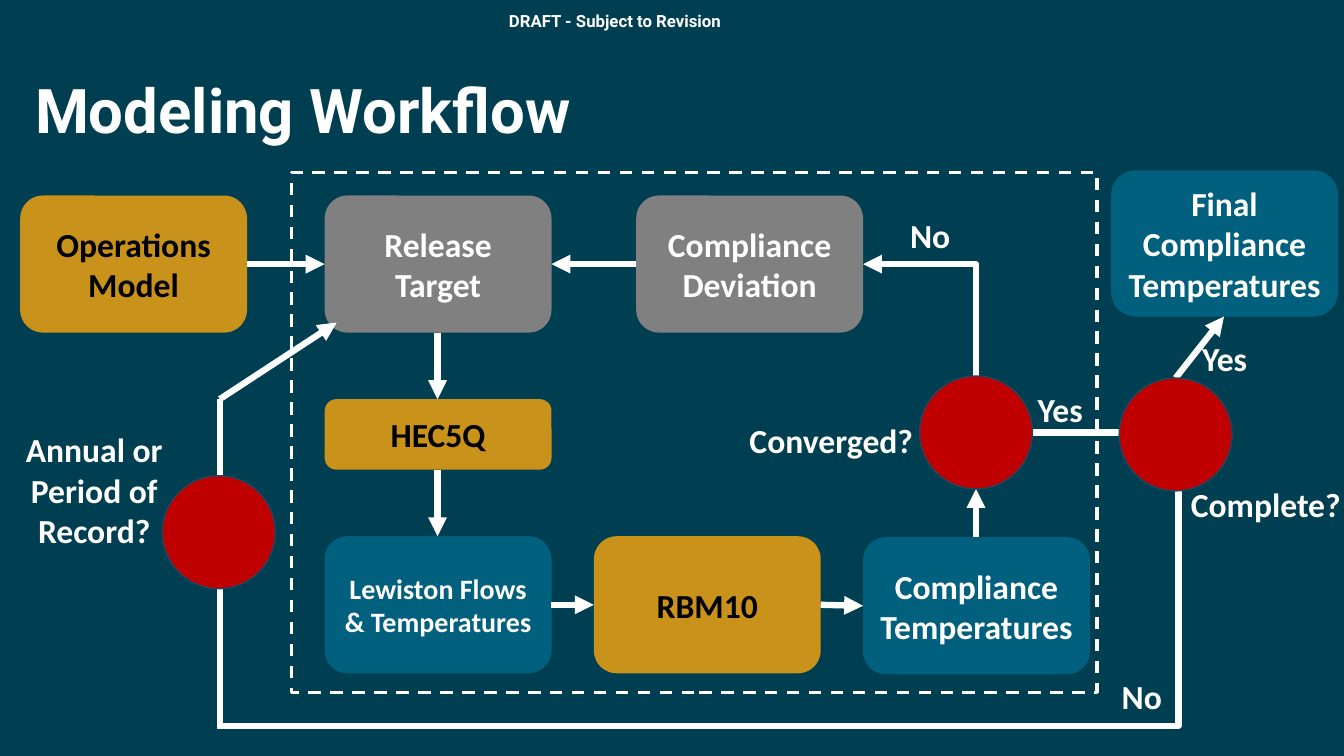
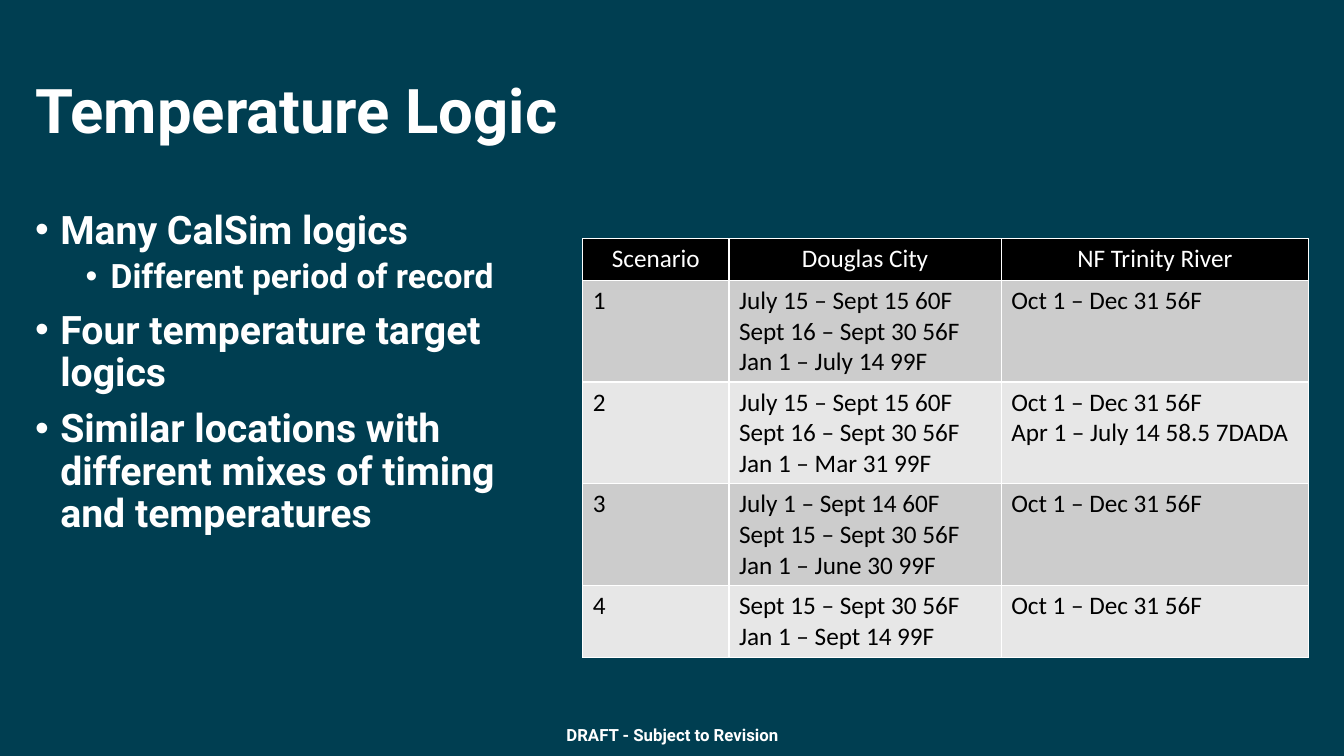
from lxml import etree
from pptx import Presentation
from pptx import util as u
from pptx.dml.color import RGBColor
from pptx.enum import dml, shapes, text
from pptx.oxml import ns

PX = 9144  # EMU in one px, 100 px to the inch
PAGE_SIZE = (1333, 750)

NAVY = RGBColor(0x00, 0x3E, 0x51)
TEAL = RGBColor(0x00, 0x60, 0x7E)
GOLD = RGBColor(0xC9, 0x92, 0x1B)
GRAY = RGBColor(0x80, 0x80, 0x80)
RED = RGBColor(0xC0, 0x00, 0x00)
OUTLINE = RGBColor(0x28, 0x44, 0x5D)
WHITE = RGBColor(0xFF, 0xFF, 0xFF)
BLACK = RGBColor(0x00, 0x00, 0x00)
ROW_FILLS = (RGBColor(0xCC, 0xCC, 0xCC), RGBColor(0xE7, 0xE7, 0xE7))

HEADING_FONT = "Roboto"
DIAGRAM_FONT = "Calibri"
LINE_WIDTH = 4.5

BOX_W, BOX_H, CIRCLE = 225, 136, 112
TARGET_X, TOP_Y, BOTTOM_Y = 322, 194, 532

BULLETS = [
    (0, "Many CalSim logics"),
    (1, "Different period of record"),
    (0, "Four temperature target logics"),
    (0, "Similar locations with different mixes of timing and temperatures"),
]
# level: (left margin px, size pt, space before pt)
BULLET_LEVELS = {0: (25, 28, 10), 1: (75, 24, 5)}

COLUMN_WIDTHS = (145, 270, 305)
ROW_HEIGHTS = (41, 101, 101, 101, 71)
SCENARIOS = [
    ("Scenario", "Douglas City", "NF Trinity River"),
    ("1", "July 15 – Sept 15 60F\nSept 16 – Sept 30 56F\nJan 1 – July 14 99F",
     "Oct 1 – Dec 31 56F"),
    ("2", "July 15 – Sept 15 60F\nSept 16 – Sept 30 56F\nJan 1 – Mar 31 99F",
     "Oct 1 – Dec 31 56F\nApr 1 – July 14 58.5 7DADA"),
    ("3", "July 1 – Sept 14 60F\nSept 15 – Sept 30 56F\nJan 1 – June 30 99F",
     "Oct 1 – Dec 31 56F"),
    ("4", "Sept 15 – Sept 30 56F\nJan 1 – Sept 14 99F", "Oct 1 – Dec 31 56F"),
]


def emu(lengths):
    return [length * PX for length in lengths]


def add_child(parent, tag, **attributes):
    return etree.SubElement(parent, ns.qn(tag), attributes)


def style(para, font, size, color=WHITE, bold=True, align=None):
    para.font.name = font
    para.font.size = u.Pt(size)
    para.font.bold = bold
    para.font.color.rgb = color
    para.alignment = align


def write(frame, content, font, size, color=WHITE, bold=True,
          align=text.PP_ALIGN.CENTER, anchor=text.MSO_ANCHOR.MIDDLE):
    """Fill a text frame, one paragraph for each line of content."""
    frame.word_wrap = True
    frame.vertical_anchor = anchor
    frame.text = content
    for para in frame.paragraphs:
        style(para, font, size, color, bold, align)


def add_text(page, area, content, font, size, **options):
    box = page.shapes.add_textbox(*emu(area))
    write(box.text_frame, content, font, size, **options)
    return box


def add_page(deck, title, draft_area):
    """Add a page with the shared background, title and draft mark."""
    page = deck.slides.add_slide(deck.slide_layouts[6])
    page.background.fill.solid()
    page.background.fill.fore_color.rgb = NAVY
    heading = add_text(page, (25, 40, 1280, 145), title, HEADING_FONT, 44,
                       align=text.PP_ALIGN.LEFT)
    heading.text_frame.paragraphs[0].line_spacing = 0.9
    add_text(page, draft_area, "DRAFT - Subject to Revision", HEADING_FONT, 12)
    return page


def add_plain_shape(page, kind, area, fill=None, line=None, width=1):
    shape = page.shapes.add_shape(kind, *emu(area))
    shape.shadow.inherit = False
    if fill is None:
        shape.fill.background()
    else:
        shape.fill.solid()
        shape.fill.fore_color.rgb = fill
    if line is None:
        shape.line.fill.background()
    else:
        shape.line.color.rgb = line
        shape.line.width = u.Pt(width)
    return shape


def add_step(page, area, content, fill, size=24):
    step = add_plain_shape(page, shapes.MSO_SHAPE.ROUNDED_RECTANGLE, area, fill)
    color = BLACK if fill == GOLD else WHITE
    write(step.text_frame, content, DIAGRAM_FONT, size, color)


def add_label(page, area, content):
    add_text(page, area, content, DIAGRAM_FONT, 24, anchor=text.MSO_ANCHOR.TOP)


def add_line(page, start, end, arrow="a:tailEnd", kind=shapes.MSO_CONNECTOR.STRAIGHT):
    """Connect two points; arrow is a:headEnd (start), a:tailEnd (end) or None."""
    line = page.shapes.add_connector(kind, *emu(start + end))
    line.line.color.rgb = WHITE
    line.line.width = u.Pt(LINE_WIDTH)
    properties = line.element.spPr
    if arrow:
        add_child(properties.find(ns.qn("a:ln")), arrow, type="triangle")
    add_child(properties, "a:effectLst")
    return line


def add_elbow(page, start, end, preset, arrow=None, bend=None):
    """Add a bent line; bend places its middle leg in 1/100000 of the width."""
    line = add_line(page, start, end, arrow, shapes.MSO_CONNECTOR.ELBOW)
    geometry = line.element.spPr.find(ns.qn("a:prstGeom"))
    geometry.set("prst", preset)
    if bend is not None:
        guides = geometry.find(ns.qn("a:avLst"))
        if guides is None:
            guides = add_child(geometry, "a:avLst")
        add_child(guides, "a:gd", name="adj1", fmla=f"val {bend}")


def side(area, name):
    """Return the middle point of one side of an area."""
    left, top, width, height = area
    return {
        "left": (left, top + height // 2),
        "right": (left + width, top + height // 2),
        "top": (left + width // 2, top),
        "bottom": (left + width // 2, top + height),
    }[name]


def add_bullets(page, area):
    frame = page.shapes.add_textbox(*emu(area)).text_frame
    frame.word_wrap = True
    for index, (level, content) in enumerate(BULLETS):
        para = frame.add_paragraph() if index else frame.paragraphs[0]
        margin, size, space = BULLET_LEVELS[level]
        para.text = content
        para.level = level
        para.line_spacing = 0.9
        para.space_before = u.Pt(space if index else 0)
        properties = para._p.get_or_add_pPr()
        properties.set("marL", str(margin * PX))
        properties.set("indent", str(-25 * PX))
        add_child(properties, "a:buFont", typeface="Arial")
        add_child(properties, "a:buChar", char="•")
        style(para, HEADING_FONT, size)


def add_borders(cell):
    properties = cell._tc.get_or_add_tcPr()
    for tag in ("a:lnL", "a:lnR", "a:lnT", "a:lnB"):
        border = add_child(properties, tag, w=str(u.Pt(1)))
        add_child(add_child(border, "a:solidFill"), "a:srgbClr", val=str(WHITE))


def add_scenario_table(page, left, top):
    area = (left, top, sum(COLUMN_WIDTHS), sum(ROW_HEIGHTS))
    table = page.shapes.add_table(len(SCENARIOS), len(COLUMN_WIDTHS), *emu(area)).table
    table.horz_banding = False
    for column, width in zip(table.columns, emu(COLUMN_WIDTHS)):
        column.width = width
    for index, (row, height) in enumerate(zip(table.rows, emu(ROW_HEIGHTS))):
        row.height = height
        header = index == 0
        for cell, content in zip(row.cells, SCENARIOS[index]):
            cell.text = content
            for para in cell.text_frame.paragraphs:
                style(para, DIAGRAM_FONT, 18, WHITE if header else BLACK, False,
                      text.PP_ALIGN.CENTER if header else text.PP_ALIGN.LEFT)
            add_borders(cell)
            cell.fill.solid()
            cell.fill.fore_color.rgb = BLACK if header else ROW_FILLS[(index - 1) % 2]


def build_workflow(deck):
    page = add_page(deck, "Modeling Workflow", (385, 1, 450, 40))
    frame = add_plain_shape(page, shapes.MSO_SHAPE.RECTANGLE, (289, 171, 799, 516),
                            line=WHITE, width=2.25)
    frame.line.dash_style = dml.MSO_LINE.DASH

    operations = (20, TOP_Y, BOX_W, BOX_H)
    target = (TARGET_X, TOP_Y, BOX_W, BOX_H)
    deviation = (631, TOP_Y, BOX_W, BOX_H)
    reservoir = (TARGET_X, 396, BOX_W, 70)
    lewiston = (TARGET_X, BOTTOM_Y, BOX_W, BOX_H)
    river = (589, BOTTOM_Y, BOX_W, BOX_H)
    compliance = (856, BOTTOM_Y + 1, BOX_W, BOX_H)
    final = (1102, 169, BOX_W, 145)
    converged = (912, 373, CIRCLE, CIRCLE)
    complete = (1110, 375, CIRCLE, CIRCLE)
    period = (161, 472, CIRCLE, CIRCLE)

    add_step(page, operations, "Operations\nModel", GOLD)
    add_step(page, target, "Release Target", GRAY)
    add_step(page, deviation, "Compliance Deviation", GRAY)
    add_step(page, reservoir, "HEC5Q", GOLD)
    add_step(page, lewiston, "Lewiston Flows & Temperatures", TEAL, size=20)
    add_step(page, river, "RBM10", GOLD)
    add_step(page, compliance, "Compliance Temperatures", TEAL)
    add_step(page, final, "Final Compliance Temperatures", TEAL)

    for origin, exit_side, goal, entry_side in (
        (operations, "right", target, "left"),
        (deviation, "left", target, "right"),
        (target, "bottom", reservoir, "top"),
        (reservoir, "bottom", lewiston, "top"),
        (lewiston, "right", river, "left"),
        (river, "right", compliance, "left"),
        (compliance, "top", converged, "bottom"),
        (complete, "top", final, "bottom"),
    ):
        add_line(page, side(origin, exit_side), side(goal, entry_side))

    add_elbow(page, side(deviation, "right"), side(converged, "top"),
              "bentConnector2", arrow="a:headEnd")
    add_elbow(page, side(converged, "right"), (215, 720), "bentConnector3", bend=-17900)
    add_line(page, (218, 720), (218, 396), arrow=None)
    add_line(page, (218, 396), (334, 320))

    for decision in (converged, complete, period):
        add_plain_shape(page, shapes.MSO_SHAPE.OVAL, decision, RED, OUTLINE)

    for area, content in (
        ((706, 412, 237, 50), "Converged?"),
        ((1137, 475, 237, 50), "Complete?"),
        ((-25, 421, 237, 131), "Annual or Period of Record?"),
        ((858, 208, 129, 50), "No"),
        ((1068, 666, 129, 50), "No"),
        ((987, 381, 129, 50), "Yes"),
        ((1150, 330, 129, 50), "Yes"),
    ):
        add_label(page, area, content)


def build_temperature_logic(deck):
    page = add_page(deck, "Temperature Logic", (442, 709, 450, 40))
    add_bullets(page, (25, 204, 490, 476))
    add_scenario_table(page, 578, 237)


def main():
    deck = Presentation()
    deck.slide_width, deck.slide_height = emu(PAGE_SIZE)
    build_workflow(deck)
    build_temperature_logic(deck)
    deck.save("out.pptx")


if __name__ == "__main__":
    main()
